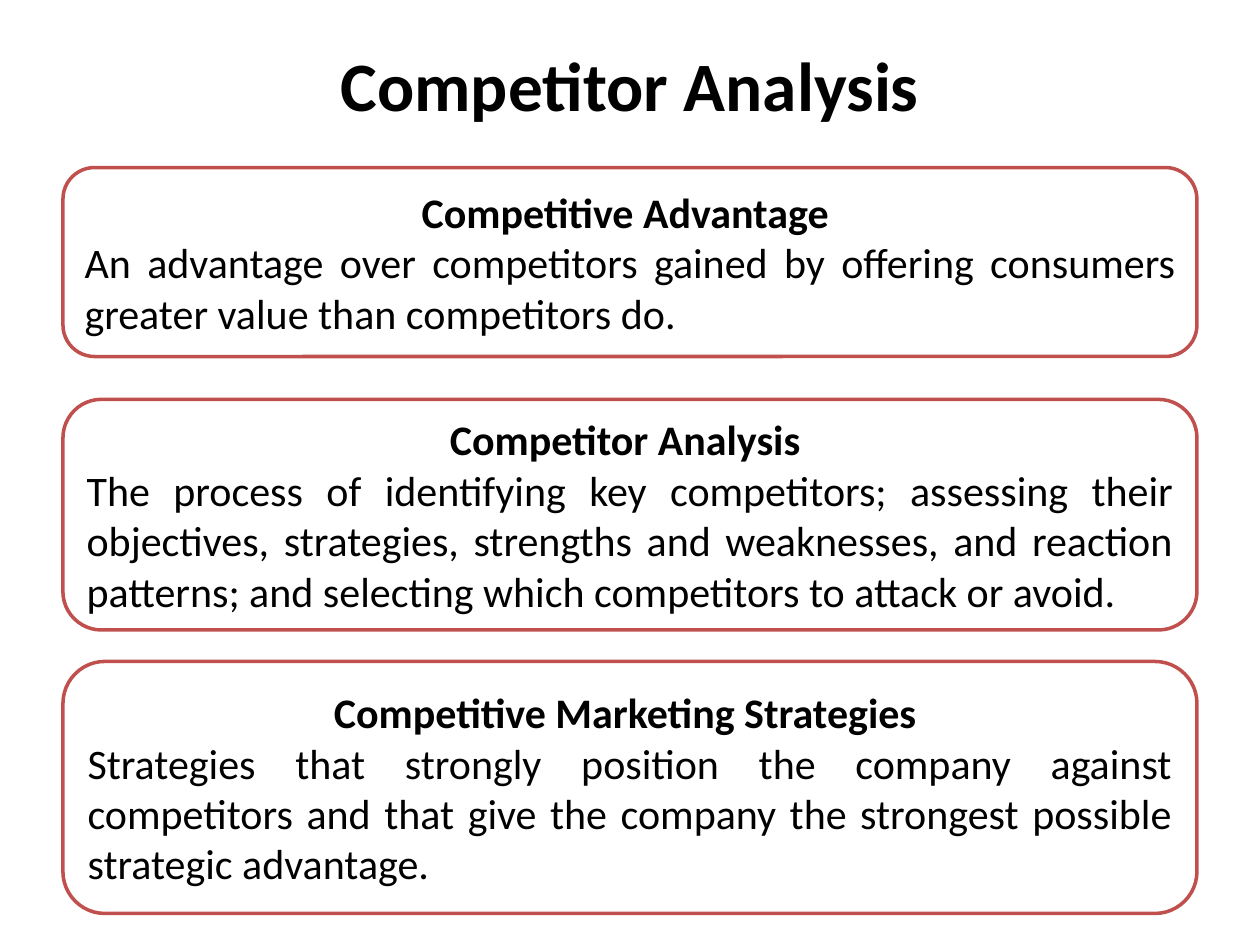
from pptx import Presentation
from pptx.dml.color import RGBColor
from pptx.enum.shapes import MSO_SHAPE
from pptx.enum.text import MSO_ANCHOR, PP_ALIGN
from pptx.util import Inches, Pt

ROUND = MSO_SHAPE.ROUNDED_RECTANGLE
MIDDLE = MSO_ANCHOR.MIDDLE
CENTER, JUSTIFY = PP_ALIGN.CENTER, PP_ALIGN.JUSTIFY
LEFT, WIDTH = Inches(0.5), Inches(9)


def color(code):
    return RGBColor.from_string(code)


def style(para, text, size, bold, align):
    para.text = text
    para.alignment = align
    para.font.name = "Calibri"
    para.font.size = Pt(size)
    para.font.bold = bold
    para.font.color.rgb = color("000000")


deck = Presentation()
deck.slide_width, deck.slide_height = Inches(10), Inches(7.5)
slide = deck.slides.add_slide(deck.slide_layouts[5])

# Title
title = slide.shapes.title
title.left, title.top = LEFT, Inches(0.25)
title.width, title.height = WIDTH, Inches(0.83)
title.text_frame.vertical_anchor = MIDDLE
style(title.text_frame.paragraphs[0], "Competitor Analysis", 39.6, True, CENTER)

# Definition boxes: top, height, term, meaning
terms = [
    (1.33, 1.5, "Competitive Advantage ",
     "An advantage over competitors gained by offering consumers "
     "greater value than competitors do. "),
    (3.17, 1.83, "Competitor Analysis ",
     "The process of identifying key competitors; assessing their "
     "objectives, strategies, strengths and weaknesses, and reaction "
     "patterns; and selecting which competitors to attack or avoid. "),
    (5.25, 2, "Competitive Marketing Strategies ",
     "Strategies that strongly position the company against "
     "competitors and that give the company the strongest possible "
     "strategic advantage. "),
]
for top, height, term, meaning in terms:
    box = slide.shapes.add_shape(ROUND, LEFT, Inches(top), WIDTH, Inches(height))
    box.shadow.inherit = False
    box.fill.solid()
    box.fill.fore_color.rgb = color("FFFFFF")
    box.line.color.rgb = color("C0504D")
    box.line.width = Pt(2)
    frame = box.text_frame
    frame.word_wrap = True
    frame.vertical_anchor = MIDDLE
    style(frame.paragraphs[0], term, 24, True, CENTER)
    style(frame.add_paragraph(), meaning, 24, False, JUSTIFY)

deck.save("out.pptx")
